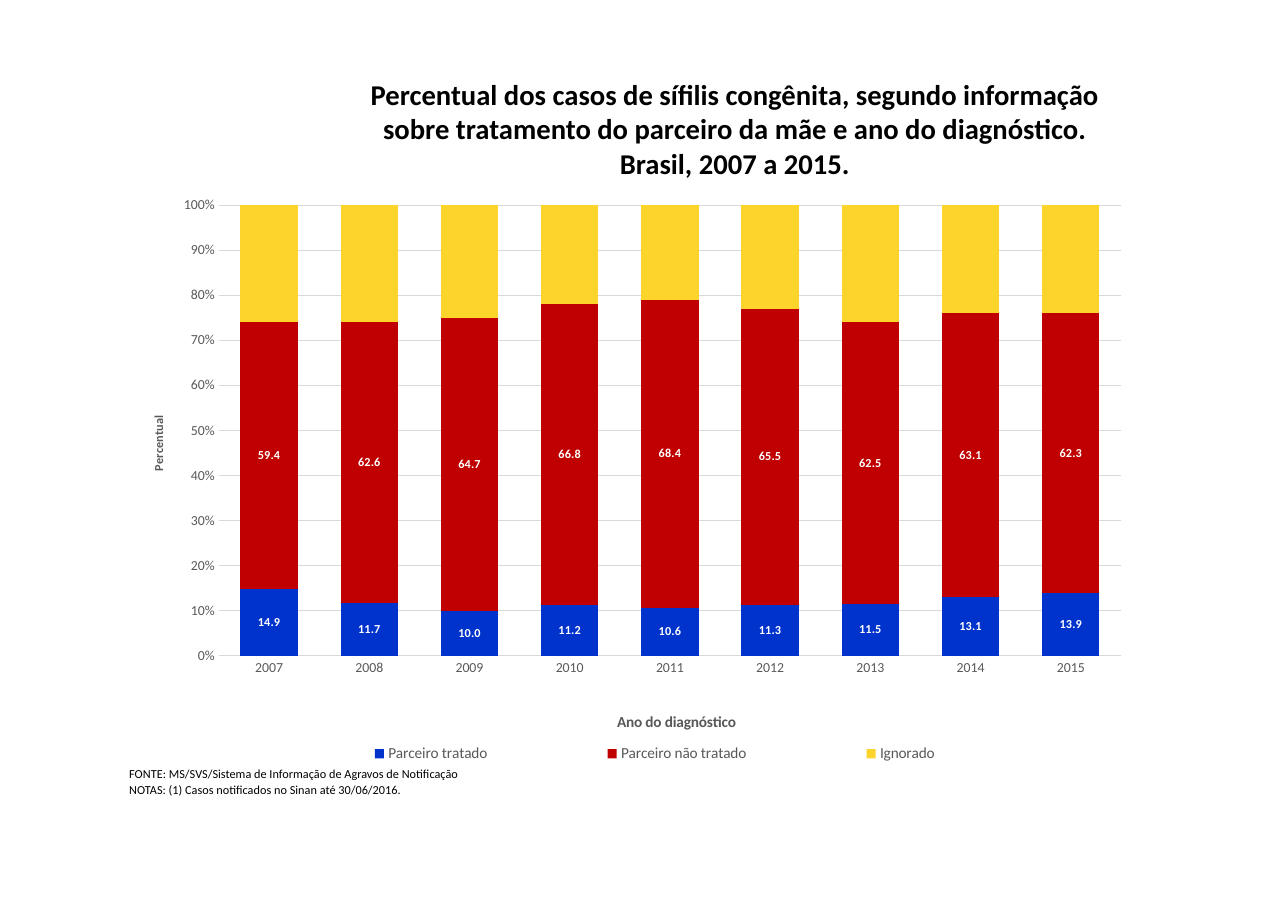
from lxml import etree
from pptx import Presentation
from pptx.chart.data import CategoryChartData
from pptx.dml.color import RGBColor
from pptx.enum.chart import XL_CHART_TYPE as ChartType
from pptx.enum.chart import XL_LEGEND_POSITION as LegendPosition
from pptx.enum.chart import XL_TICK_MARK as TickMark
from pptx.enum.text import MSO_ANCHOR, PP_ALIGN
from pptx.oxml.ns import qn
from pptx.util import Cm, Pt

BLACK = RGBColor(0x00, 0x00, 0x00)
WHITE = RGBColor(0xFF, 0xFF, 0xFF)
GREY = RGBColor(0x59, 0x59, 0x59)
LIGHT_GREY = RGBColor(0xD9, 0xD9, 0xD9)
BLUE = RGBColor(0x00, 0x33, 0xCC)
RED = RGBColor(0xC0, 0x00, 0x00)
YELLOW = RGBColor(0xFC, 0xD4, 0x2C)
FONT = "Calibri"

TITLE = ("Percentual dos casos de sífilis congênita, segundo informação sobre "
         "tratamento do parceiro da mãe e ano do diagnóstico. Brasil, 2007 a 2015.")
YEARS = [str(year) for year in range(2007, 2016)]
# name, colour, labelled, values
SERIES = [
    ("Parceiro tratado", BLUE, True,
     [14.9, 11.7, 10.0, 11.2, 10.6, 11.3, 11.5, 13.1, 13.9]),
    ("Parceiro não tratado", RED, True,
     [59.4, 62.6, 64.7, 66.8, 68.4, 65.5, 62.5, 63.1, 62.3]),
    ("Ignorado", YELLOW, False, [26, 26, 25, 22, 21, 23, 26, 24, 24]),
]
FOOTNOTES = [
    "FONTE: MS/SVS/Sistema de Informação de Agravos de Notificação",
    "NOTAS: (1) Casos notificados no Sinan até 30/06/2016.",
]


def style_font(font, size, color, bold=False):
    font.name, font.size, font.bold = FONT, Pt(size), bold
    font.color.rgb = color


def add_run(paragraph, text, size, color, bold=False):
    run = paragraph.add_run()
    run.text = text
    style_font(run.font, size, color, bold)


def place(element, index, inner=False, **fractions):
    """Give a chart part a manual layout, in fractions of the chart frame."""
    for old_layout in element.findall(qn("c:layout")):
        element.remove(old_layout)
    layout = etree.Element(qn("c:layout"))
    manual = etree.SubElement(layout, qn("c:manualLayout"))
    settings = {"layoutTarget": "inner"} if inner else {}
    settings |= {"xMode": "edge", "yMode": "edge"} | fractions
    for name, value in settings.items():
        etree.SubElement(manual, qn(f"c:{name}")).set("val", str(value))
    element.insert(index, layout)


def style_axis(axis, title, title_size, x, y):
    axis.major_tick_mark = axis.minor_tick_mark = TickMark.NONE
    style_font(axis.tick_labels.font, 9, GREY)
    paragraph = axis.axis_title.text_frame.paragraphs[0]
    add_run(paragraph, title, title_size, GREY, bold=True)
    place(axis.axis_title._element, 1, x=x, y=y)


def style_line(line):
    line.color.rgb = LIGHT_GREY
    line.width = Pt(0.75)


def add_stacked_chart(slide):
    data = CategoryChartData(number_format="0.0")
    data.categories = YEARS
    for name, _, _, values in SERIES:
        data.add_series(name, values)
    chart = slide.shapes.add_chart(
        ChartType.COLUMN_STACKED_100, Cm(3.18), Cm(4.32), Cm(23.37), Cm(13.67), data).chart
    chart.has_title = False
    style_font(chart.font, 10, BLACK)

    plot = chart.plots[0]
    plot.gap_width, plot.overlap = 75, 100
    plot.vary_by_categories = False
    for series, (_, color, labelled, _) in zip(plot.series, SERIES):
        series.format.fill.solid()
        series.format.fill.fore_color.rgb = color
        if labelled:
            labels = series.data_labels
            labels.show_value = True
            labels.number_format, labels.number_format_is_linked = "0.0", False
            style_font(labels.font, 8, WHITE, bold=True)
    place(chart._chartSpace.chart.plotArea, 0, inner=True, x=0.08, y=0.03, w=0.89, h=0.76)

    style_axis(chart.category_axis, "Ano do diagnóstico", 10, x=0.47, y=0.88)
    style_line(chart.category_axis.format.line)
    value_axis = chart.value_axis
    style_axis(value_axis, "Percentual", 8, x=0.01, y=0.38)
    value_axis.tick_labels.number_format = "0%"
    value_axis.tick_labels.number_format_is_linked = False
    value_axis.maximum_scale, value_axis.major_unit = 1, 0.1
    value_axis.format.line.fill.background()
    style_line(value_axis.major_gridlines.format.line)

    chart.has_legend = True
    legend = chart.legend
    legend.position = LegendPosition.BOTTOM
    legend.include_in_layout = False
    style_font(legend.font, 10, GREY)
    place(legend._element, 1, x=0.12, y=0.93, w=0.78, h=0.05)


def add_title(slide):
    frame = slide.shapes.add_textbox(Cm(7.8), Cm(1.65), Cm(18.29), Cm(2.67)).text_frame
    frame.word_wrap = True
    paragraph = frame.paragraphs[0]
    paragraph.alignment = PP_ALIGN.CENTER
    add_run(paragraph, TITLE, 18.7, BLACK, bold=True)


def add_footnotes(slide):
    table = slide.shapes.add_table(
        len(FOOTNOTES), 2, Cm(2.95), Cm(17.65), Cm(9.93), Cm(0.74)).table
    table.first_row = table.horz_banding = False
    table.columns[0].width, table.columns[1].width = Cm(7.65), Cm(2.28)
    for row, note in zip(table.rows, FOOTNOTES):
        for cell in row.cells:
            cell.fill.background()
            cell.vertical_anchor = MSO_ANCHOR.MIDDLE
            cell.margin_left = cell.margin_right = cell.margin_top = Cm(0.03)
            cell.margin_bottom = 0
            cell.text_frame.paragraphs[0].font.size = Pt(8)
        add_run(row.cells[0].text_frame.paragraphs[0], note, 8, BLACK)
    table.cell(0, 0).merge(table.cell(0, 1))


def main():
    presentation = Presentation()
    presentation.slide_width, presentation.slide_height = Cm(29.7), Cm(21)
    slide = presentation.slides.add_slide(presentation.slide_layouts[6])
    add_stacked_chart(slide)
    add_title(slide)
    add_footnotes(slide)
    presentation.save("out.pptx")


if __name__ == "__main__":
    main()
